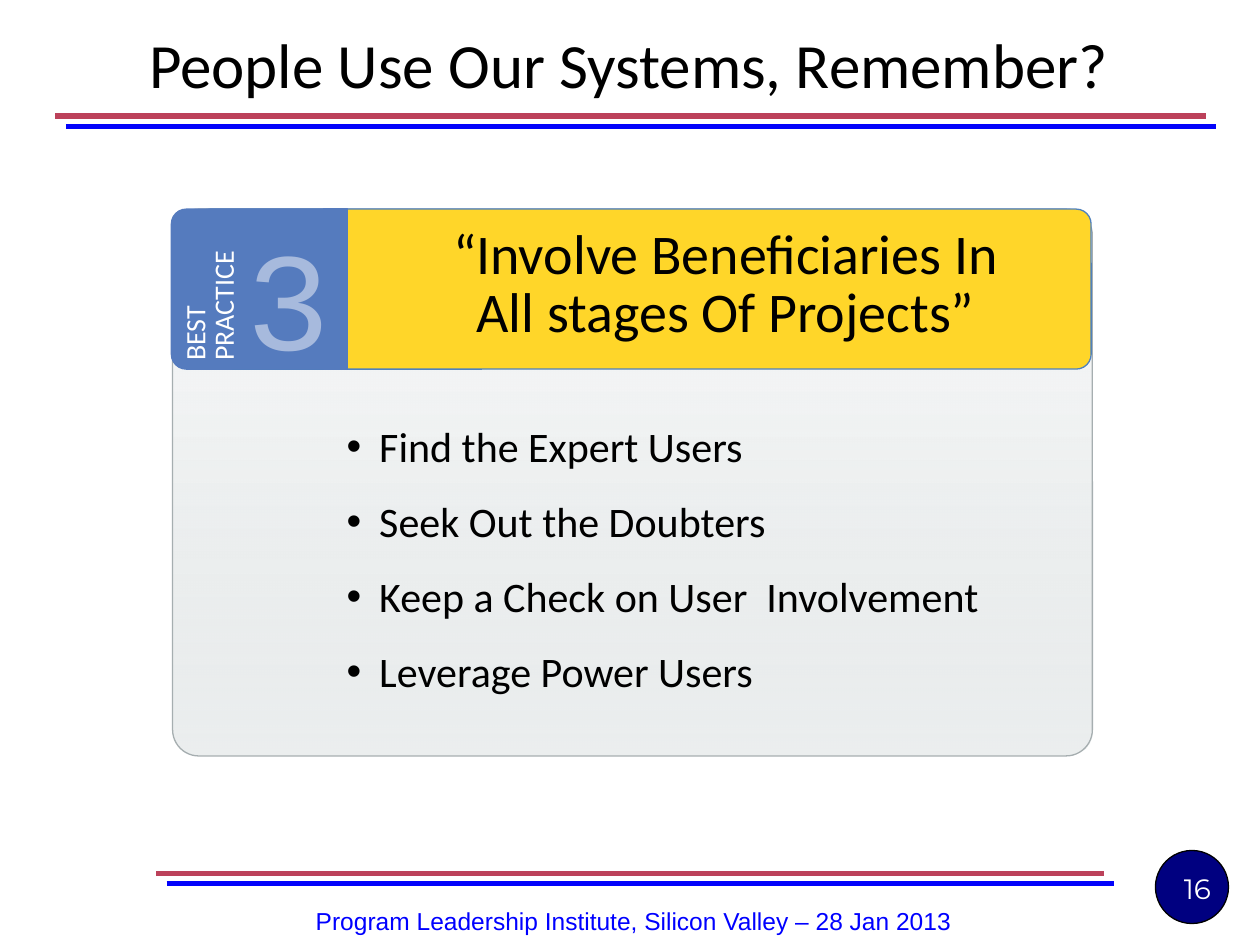
from dataclasses import dataclass

from lxml import etree
from pptx import Presentation
from pptx.dml.color import RGBColor
from pptx.enum.shapes import MSO_CONNECTOR, MSO_SHAPE
from pptx.enum.text import MSO_ANCHOR, MSO_AUTO_SIZE, PP_ALIGN
from pptx.oxml import parse_xml
from pptx.oxml.ns import nsdecls, qn
from pptx.util import Emu, Inches, Pt

LEFT, CENTER, RIGHT = PP_ALIGN.LEFT, PP_ALIGN.CENTER, PP_ALIGN.RIGHT
TOP, MIDDLE = MSO_ANCHOR.TOP, MSO_ANCHOR.MIDDLE
ROUND, RECT, OVAL = MSO_SHAPE.ROUNDED_RECTANGLE, MSO_SHAPE.RECTANGLE, MSO_SHAPE.OVAL
FIXED = MSO_AUTO_SIZE.NONE

COLORS = {
    "black": "000000", "white": "FFFFFF", "footer": "0000FF",
    "rule": "BC415A", "rule_shadow": "0303FB", "badge": "000080",
    "card_end": "CED5D6", "card_line": "A6AEB0",
    "banner": "FFD629", "banner_line": "4F81BD",
    "tab": "557BBE", "numeral": "A7BADD",
}

# The grid has 100 columns by 75 rows of square cells.
CELL = Inches(0.1)


@dataclass
class Box:
    col: float
    row: float
    cols: float
    rows: float

    def emu(self) -> tuple:
        return tuple(Emu(round(v * CELL)) for v in (self.col, self.row, self.cols, self.rows))


@dataclass
class Panel:
    kind: int
    box: Box
    fill: str
    line: str
    radius: float = 0


@dataclass
class Rule:
    start: float
    end: float
    row: float


RULES = [Rule(12.4, 87.6, 69.3), Rule(4.4, 95.7, 9.2)]
CARD = Panel(ROUND, Box(13.7, 16.6, 73, 43.4), "white", "card_line", 0.048)
PANELS = [
    Panel(OVAL, Box(91.7, 67.5, 5.8, 5.8), "badge", "black"),
    Panel(ROUND, Box(15.5, 16.6, 71.1, 12.7), "banner", "banner_line", 0.093),
    Panel(ROUND, Box(13.6, 16.6, 13.9, 12.7), "tab", "tab", 0.093),
    Panel(RECT, Box(25.7, 16.6, 1.9, 12.7), "tab", "tab"),
]
PRACTICES = [
    "Find the Expert Users",
    "Seek Out the Doubters",
    "Keep a Check on User  Involvement",
    "Leverage Power Users",
]


def rgb(name: str) -> RGBColor:
    return RGBColor.from_string(COLORS[name])


def place(sp, box: Box) -> None:
    sp.left, sp.top, sp.width, sp.height = box.emu()


def add_panel(slide, panel: Panel):
    sp = slide.shapes.add_shape(panel.kind, *panel.box.emu())
    sp.shadow.inherit = False
    sp.fill.solid()
    sp.fill.fore_color.rgb = rgb(panel.fill)
    sp.line.color.rgb = rgb(panel.line)
    sp.line.width = Pt(0.75)
    if panel.radius:
        sp.adjustments[0] = panel.radius
    return sp


def fade_down(sp) -> None:
    """Fill from white at the top to a translucent grey at the bottom."""
    sp.fill.gradient()
    sp.fill.gradient_angle = 270
    first, last = sp.fill.gradient_stops
    first.position, last.position = 0, 1
    first.color.rgb, last.color.rgb = rgb("white"), rgb("card_end")
    end_color = sp.element.spPr.findall(".//" + qn("a:srgbClr"))[1]
    etree.SubElement(end_color, qn("a:alpha"), val="39000")


def add_rule(slide, rule: Rule) -> None:
    """Red line with a hard blue shadow below and to the right."""
    x1, y, x2, _ = Box(rule.start, rule.row, rule.end, 0).emu()
    line = slide.shapes.add_connector(MSO_CONNECTOR.STRAIGHT, x1, y, x2, y)
    line.line.color.rgb = rgb("rule")
    line.line.width = Pt(3)
    line.element.spPr.append(parse_xml(
        f'<a:effectLst {nsdecls("a")}><a:outerShdw dist="{Pt(8.5)}" dir="2700000" algn="ctr">'
        f'<a:srgbClr val="{COLORS["rule_shadow"]}"/></a:outerShdw></a:effectLst>'))


def add_bullet(p, indent: Emu) -> None:
    pPr = p._p.get_or_add_pPr()
    pPr.set("marL", str(indent))
    pPr.set("indent", str(-indent))
    etree.SubElement(pPr, qn("a:buFont"), typeface="Arial")
    etree.SubElement(pPr, qn("a:buChar"), char="•")


def write(sp, lines: list, size: float, color: str = "black", font: str = "Calibri",
          align: int = LEFT, anchor: int = TOP, spacing: float = 1.0,
          after: float = 0, bullets: bool = False) -> None:
    tf = sp.text_frame
    tf.word_wrap = True
    tf.auto_size = FIXED
    tf.vertical_anchor = anchor
    for i, line in enumerate(lines):
        p = tf.paragraphs[0] if i == 0 else tf.add_paragraph()
        p.alignment = align
        p.line_spacing = spacing
        p.space_before, p.space_after = Pt(0), Pt(after)
        if bullets:
            add_bullet(p, Inches(0.26))
        r = p.add_run()
        r.text = line
        r.font.size, r.font.name = Pt(size), font
        r.font.color.rgb = rgb(color)


def add_text(slide, box: Box, lines: list, size: float, rotation: float = 0, **fmt):
    sp = slide.shapes.add_textbox(*box.emu())
    sp.rotation = rotation
    write(sp, lines, size, **fmt)


def main() -> None:
    prs = Presentation()
    prs.slide_width, prs.slide_height = 100 * CELL, 75 * CELL
    slide = prs.slides.add_slide(prs.slide_layouts[1])
    title, body = slide.placeholders

    place(title, Box(3.7, 2, 92.4, 6))
    write(title, ["People Use Our Systems, Remember?"], 36, align=CENTER, anchor=MIDDLE)

    for rule in RULES:
        add_rule(slide, rule)
    fade_down(add_panel(slide, CARD))
    for panel in PANELS:
        add_panel(slide, panel)

    add_text(slide, Box(13.1, 70.5, 74.4, 5.2),
             ["Program Leadership Institute, Silicon Valley – 28 Jan 2013"], 14,
             color="footer", font="Arial", align=CENTER, anchor=MIDDLE)
    add_text(slide, Box(73.8, 68.7, 23.3, 5.2), ["16"], 16,
             color="white", font="Montserrat", align=RIGHT)
    add_text(slide, Box(10.2, 20.2, 13.2, 5.6), ["BEST", "PRACTICE"], 16,
             rotation=270, color="white", spacing=0.85)
    add_text(slide, Box(18.6, 16.2, 10.9, 14.3), ["3"], 80,
             color="numeral", font="Courier New")
    add_text(slide, Box(34.2, 17.7, 46.8, 10.2),
             ["“Involve Beneficiaries In", "All stages Of Projects”"], 32,
             align=CENTER, spacing=0.85)

    place(body, Box(26.5, 32.9, 58.6, 24.2))
    write(body, PRACTICES, 24, after=14, bullets=True)
    slide.shapes.element.append(body.element)  # bring the list in front of the card

    prs.save("out.pptx")


if __name__ == "__main__":
    main()
